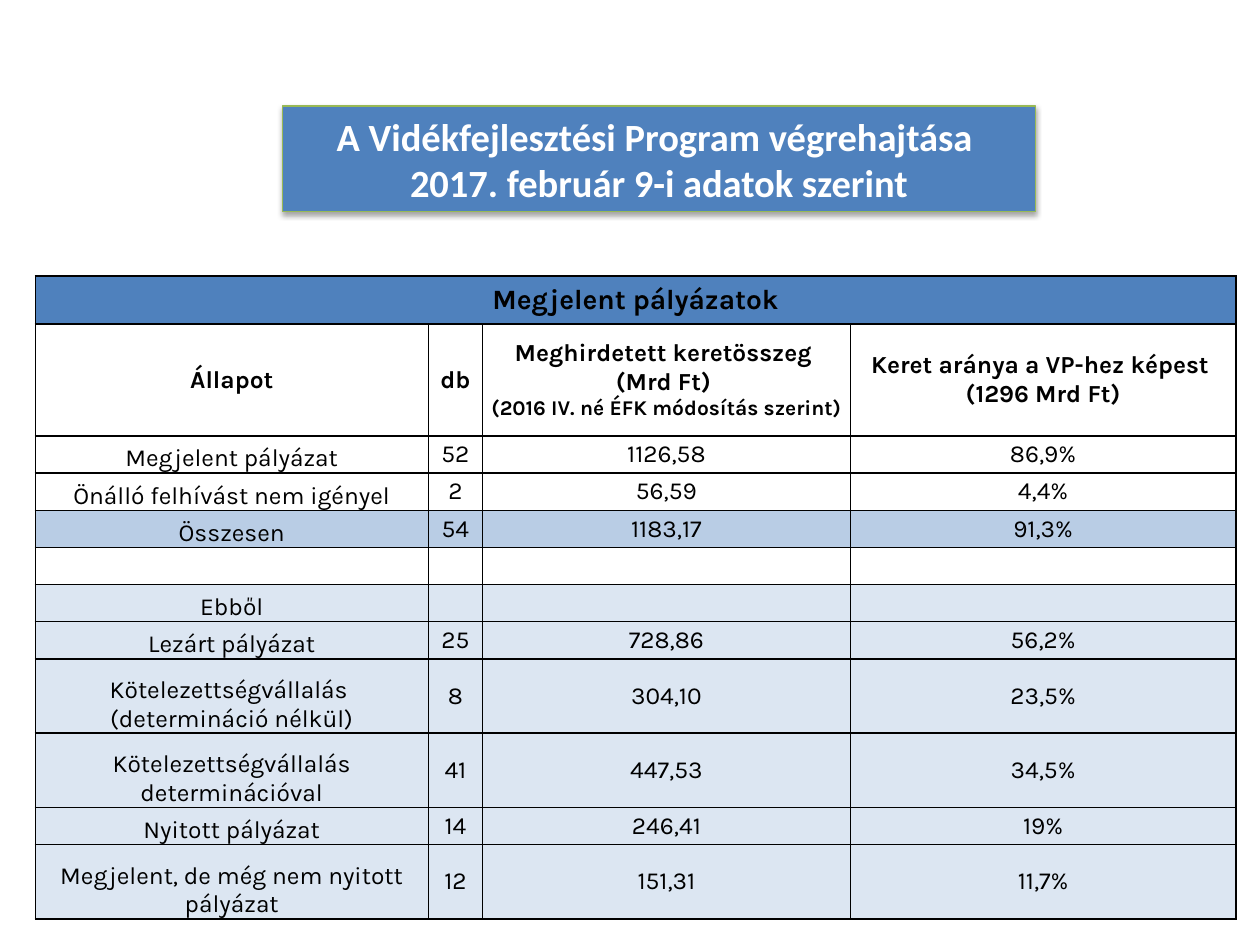
from lxml.etree import SubElement
from pptx import Presentation
from pptx.dml.color import RGBColor
from pptx.enum.text import MSO_ANCHOR, PP_ALIGN
from pptx.oxml import parse_xml
from pptx.oxml.ns import nsdecls, qn
from pptx.util import Inches, Pt

BLUE = RGBColor(0x4F, 0x81, 0xBD)
MID_BLUE = RGBColor(0xB9, 0xCD, 0xE5)
PALE_BLUE = RGBColor(0xDC, 0xE6, 0xF2)
GREEN = RGBColor(0x98, 0xB9, 0x55)
BLACK = RGBColor(0, 0, 0)
WHITE = RGBColor(0xFF, 0xFF, 0xFF)

COLS = [3.12, 0.43, 2.92, 3.06]
LINE = 0.295  # height of a one-line row

# row height, fill, cell texts
ROWS = [
    (0.38, BLUE, ["Megjelent pályázatok", "", "", ""]),
    (0.89, None, ["Állapot", "db",
                  "Meghirdetett keretösszeg \n(Mrd Ft) \n(2016 IV. né ÉFK módosítás szerint)",
                  "Keret aránya a VP-hez képest \n(1296 Mrd Ft)"]),
    (LINE, None, ["Megjelent pályázat", "52", "1126,58", "86,9%"]),
    (LINE, None, ["Önálló felhívást nem igényel", "2", "56,59", "4,4%"]),
    (LINE, MID_BLUE, ["Összesen", "54", "1183,17", "91,3%"]),
    (LINE, None, ["", "", "", ""]),
    (LINE, PALE_BLUE, ["Ebből", "", "", ""]),
    (LINE, PALE_BLUE, ["Lezárt pályázat", "25", "728,86", "56,2%"]),
    (2 * LINE, PALE_BLUE, ["Kötelezettségvállalás \n(determináció nélkül)", "8", "304,10", "23,5%"]),
    (2 * LINE, PALE_BLUE, ["Kötelezettségvállalás determinációval", "41", "447,53", "34,5%"]),
    (LINE, PALE_BLUE, ["Nyitott pályázat", "14", "246,41", "19%"]),
    (2 * LINE, PALE_BLUE, ["Megjelent, de még nem nyitott pályázat", "12", "151,31", "11,7%"]),
]


def write(tf, text, color, **font):
    """Fill a text frame with centred paragraphs, one per line of text."""
    tf.text = text
    for p in tf.paragraphs:
        p.alignment = PP_ALIGN.CENTER
        for r in p.runs:
            r.font.color.rgb = color
            for name, value in font.items():
                setattr(r.font, name, value)


prs = Presentation()
prs.slide_width, prs.slide_height = Inches(10), Inches(7.5)
s = prs.slides.add_slide(prs.slide_layouts[5])

# Table
width, height = sum(COLS), sum(row[0] for row in ROWS)
tbl = s.shapes.add_table(len(ROWS), len(COLS), Inches(0.28), Inches(2.19),
                         Inches(width), Inches(height)).table
tbl.first_row = tbl.horz_banding = False
for col, w in zip(tbl.columns, COLS):
    col.width = Inches(w)

for i, (h, fill, texts) in enumerate(ROWS):
    tbl.rows[i].height = Inches(h)
    for j, text in enumerate(texts):
        cell = tbl.cell(i, j)
        bottom = i > 1 and j == 0
        layout = {"margin_left": 0, "margin_right": 0, "margin_top": 0, "margin_bottom": 0,
                  "vertical_anchor": MSO_ANCHOR.BOTTOM if bottom else MSO_ANCHOR.MIDDLE}
        for name, value in layout.items():
            setattr(cell, name, value)
        write(cell.text_frame, text, BLACK, name="Karla",
              size=Pt(16 if i == 0 else 14), bold=i < 2)
        if not text:
            SubElement(cell.text_frame.paragraphs[0]._p, qn("a:endParaRPr"), sz="1400")
        for side in ("lnL", "lnR", "lnT", "lnB"):
            cell._tc.get_or_add_tcPr().append(parse_xml(
                f'<a:{side} {nsdecls("a")} w="{Pt(1)}"><a:solidFill>'
                f'<a:srgbClr val="{BLACK}"/></a:solidFill></a:{side}>'))
        if fill is None:
            cell.fill.background()
        else:
            cell.fill.solid()
            cell.fill.fore_color.rgb = fill

tbl.cell(0, 0).merge(tbl.cell(0, len(COLS) - 1))
tbl.cell(1, 2).text_frame.paragraphs[2].runs[0].font.size = Pt(12)

# Title banner, in front of the table
sp = s.shapes.title
sp.left, sp.top, sp.width, sp.height = (Inches(v) for v in (2.24, 0.84, 5.98, 0.84))
sp.fill.solid()
sp.fill.fore_color.rgb = BLUE
sp.line.color.rgb = GREEN
sp.line.width = Pt(0.75)
sp._element.spPr.append(parse_xml(
    f'<a:effectLst {nsdecls("a")}><a:outerShdw blurRad="{Pt(3.1)}" dist="{Pt(1.8)}" '
    f'dir="5400000" rotWithShape="0"><a:srgbClr val="{BLACK}">'
    '<a:alpha val="35000"/></a:srgbClr></a:outerShdw></a:effectLst>'))
write(sp.text_frame, "A Vidékfejlesztési Program végrehajtása \n2017. február 9-i adatok szerint",
      WHITE, name="Calibri", size=Pt(22), bold=True)
s.shapes._spTree.append(sp._element)

prs.save("out.pptx")
